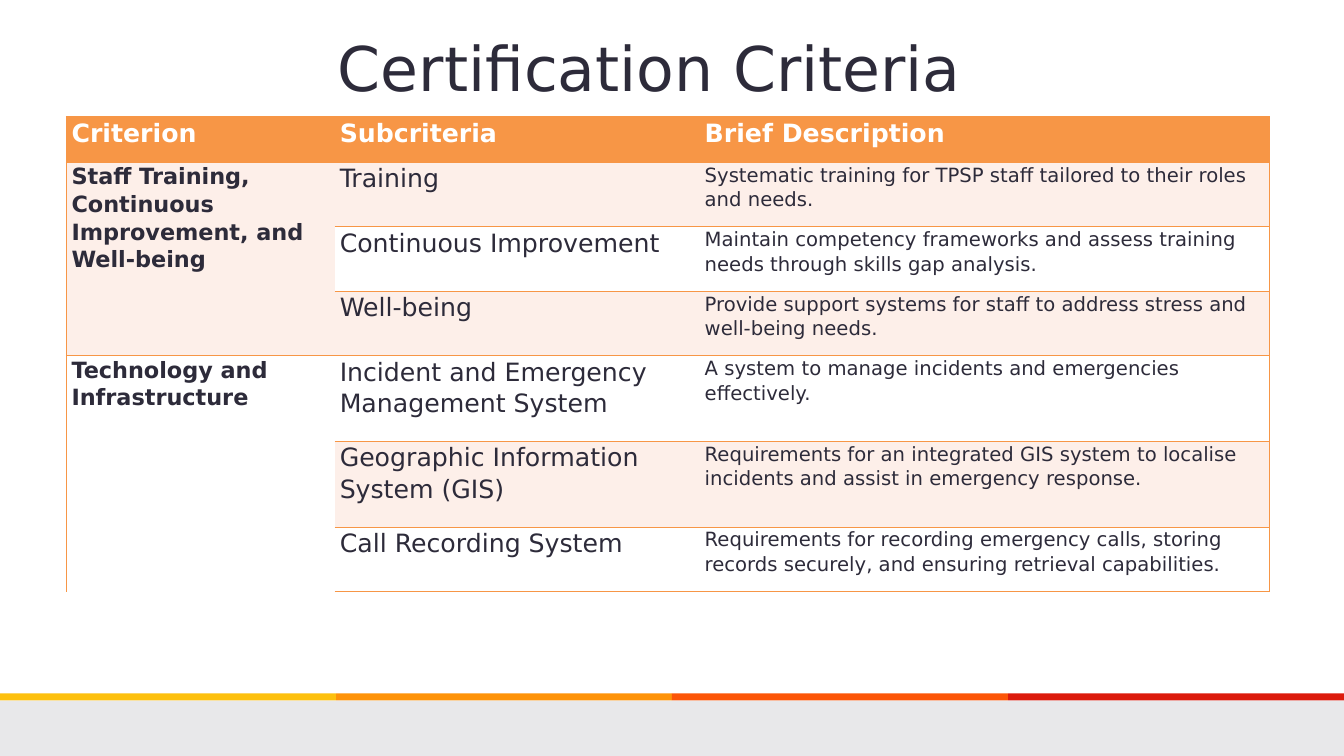
import pptx
import pptx.dml.color
import pptx.enum.shapes
import pptx.enum.text
import pptx.oxml
import pptx.oxml.ns
import pptx.util

WIDTH, HEIGHT = 13.33, 7.5
FONT = "DejaVu Sans"
INK, ORANGE, PEACH, WHITE = "2D2B3A", "F79646", "FDEFE9", "FFFFFF"
STRIPES = ["FDC00D", "FE9309", "FC5507", "DC1B0C"]
STRIPE_TOP, FOOTER_TOP = 6.88, 6.95
COLUMN_WIDTHS = [2.66, 3.62, 5.65]
ROW_HEIGHTS = [0.45, 0.64, 0.64, 0.64, 0.85, 0.85, 0.64]
HEADER = ["Criterion", "Subcriteria", "Brief Description"]
CRITERIA = {
    "Staff Training, Continuous Improvement, and Well-being": [
        ("Training",
         "Systematic training for TPSP staff tailored to their roles and needs."),
        ("Continuous Improvement",
         "Maintain competency frameworks and assess training needs through skills gap analysis."),
        ("Well-being",
         "Provide support systems for staff to address stress and well-being needs."),
    ],
    "Technology and Infrastructure": [
        ("Incident and Emergency Management System",
         "A system to manage incidents and emergencies effectively."),
        ("Geographic Information System (GIS)",
         "Requirements for an integrated GIS system to localise incidents and assist in emergency response."),
        ("Call Recording System",
         "Requirements for recording emergency calls, storing records securely, and ensuring retrieval capabilities."),
    ],
}


def inches(*lengths):
    return [pptx.util.Inches(length) for length in lengths]


def color(value):
    return pptx.dml.color.RGBColor.from_string(value)


def write_text(frame, text, size=18, fill=INK, bold=False, align="LEFT",
               line_spacing=1.0, space_after=0):
    frame.word_wrap = True
    paragraph = frame.paragraphs[0]
    paragraph.alignment = getattr(pptx.enum.text.PP_ALIGN, align)
    paragraph.line_spacing = line_spacing
    paragraph.space_after = pptx.util.Pt(space_after)
    run = paragraph.add_run()
    run.text = text
    run.font.name = FONT
    run.font.size = pptx.util.Pt(size)
    run.font.bold = bold
    run.font.color.rgb = color(fill)


def add_bar(slide, left, top, width, height, fill):
    shape = slide.shapes.add_shape(
        pptx.enum.shapes.MSO_SHAPE.RECTANGLE, *inches(left, top, width, height))
    shape.shadow.inherit = False
    shape.fill.solid()
    shape.fill.fore_color.rgb = color(fill)
    shape.line.fill.background()


def add_title(slide, text):
    box = slide.shapes.add_textbox(*inches(0, 0.22, 12.89, 1.3))
    box.text_frame.margin_top = pptx.util.Inches(0.08)
    write_text(box.text_frame, text, size=44, align="CENTER")


def set_borders(cell, sides):
    """Draw the named sides in orange and clear the others."""
    properties = cell._tc.get_or_add_tcPr()
    for position, side in enumerate("LRTB"):
        paint = (f'<a:solidFill><a:srgbClr val="{ORANGE}"/></a:solidFill>'
                 if side in sides else "<a:noFill/>")
        line = pptx.oxml.parse_xml(
            f'<a:ln{side} {pptx.oxml.ns.nsdecls("a")} w="12700">{paint}</a:ln{side}>')
        properties.insert(position, line)


def format_cell(cell, fill, sides):
    cell.margin_left = cell.margin_right = pptx.util.Inches(0.05)
    cell.margin_top = cell.margin_bottom = 0
    cell.fill.solid()
    cell.fill.fore_color.rgb = color(fill)
    set_borders(cell, sides)


def write_cell(cell, text, **text_format):
    write_text(cell.text_frame, text, line_spacing=1.07, space_after=8, **text_format)


def add_criteria_table(slide):
    frame = slide.shapes.add_table(
        len(ROW_HEIGHTS), len(COLUMN_WIDTHS),
        *inches(0.66, 1.16, sum(COLUMN_WIDTHS), sum(ROW_HEIGHTS)))
    table = frame.table
    table.first_row = table.horz_banding = False
    for column, width in zip(table.columns, COLUMN_WIDTHS):
        column.width = pptx.util.Inches(width)
    for row, height in zip(table.rows, ROW_HEIGHTS):
        row.height = pptx.util.Inches(height)

    # Header row
    for column, (text, sides) in enumerate(zip(HEADER, ["LTB", "TB", "RTB"])):
        format_cell(table.cell(0, column), ORANGE, sides)
        write_cell(table.cell(0, column), text, fill=WHITE, bold=True)

    # Each criterion spans the rows of its subcriteria
    row = 1
    for criterion, entries in CRITERIA.items():
        first, last = row, row + len(entries) - 1
        for subcriterion, description in entries:
            band = PEACH if row % 2 else WHITE
            edges = "L" + "T" * (row == first) + "B" * (row == last)
            format_cell(table.cell(row, 0), PEACH if first % 2 else WHITE, edges)
            format_cell(table.cell(row, 1), band, "TB")
            format_cell(table.cell(row, 2), band, "RTB")
            write_cell(table.cell(row, 1), subcriterion)
            write_cell(table.cell(row, 2), description, size=14)
            row += 1
        table.cell(first, 0).merge(table.cell(last, 0))
        write_cell(table.cell(first, 0), criterion, size=16, bold=True)


def main():
    presentation = pptx.Presentation()
    presentation.slide_width, presentation.slide_height = inches(WIDTH, HEIGHT)
    slide = presentation.slides.add_slide(presentation.slide_layouts[6])

    # Footer band with its row of equal stripes
    add_bar(slide, 0, FOOTER_TOP, WIDTH, HEIGHT - FOOTER_TOP, "E8E8EA")
    stripe_width = WIDTH / len(STRIPES)
    for index, fill in enumerate(STRIPES):
        add_bar(slide, index * stripe_width, STRIPE_TOP, stripe_width,
                FOOTER_TOP - STRIPE_TOP, fill)

    add_title(slide, "Certification Criteria")
    add_criteria_table(slide)
    presentation.save("out.pptx")


if __name__ == "__main__":
    main()
